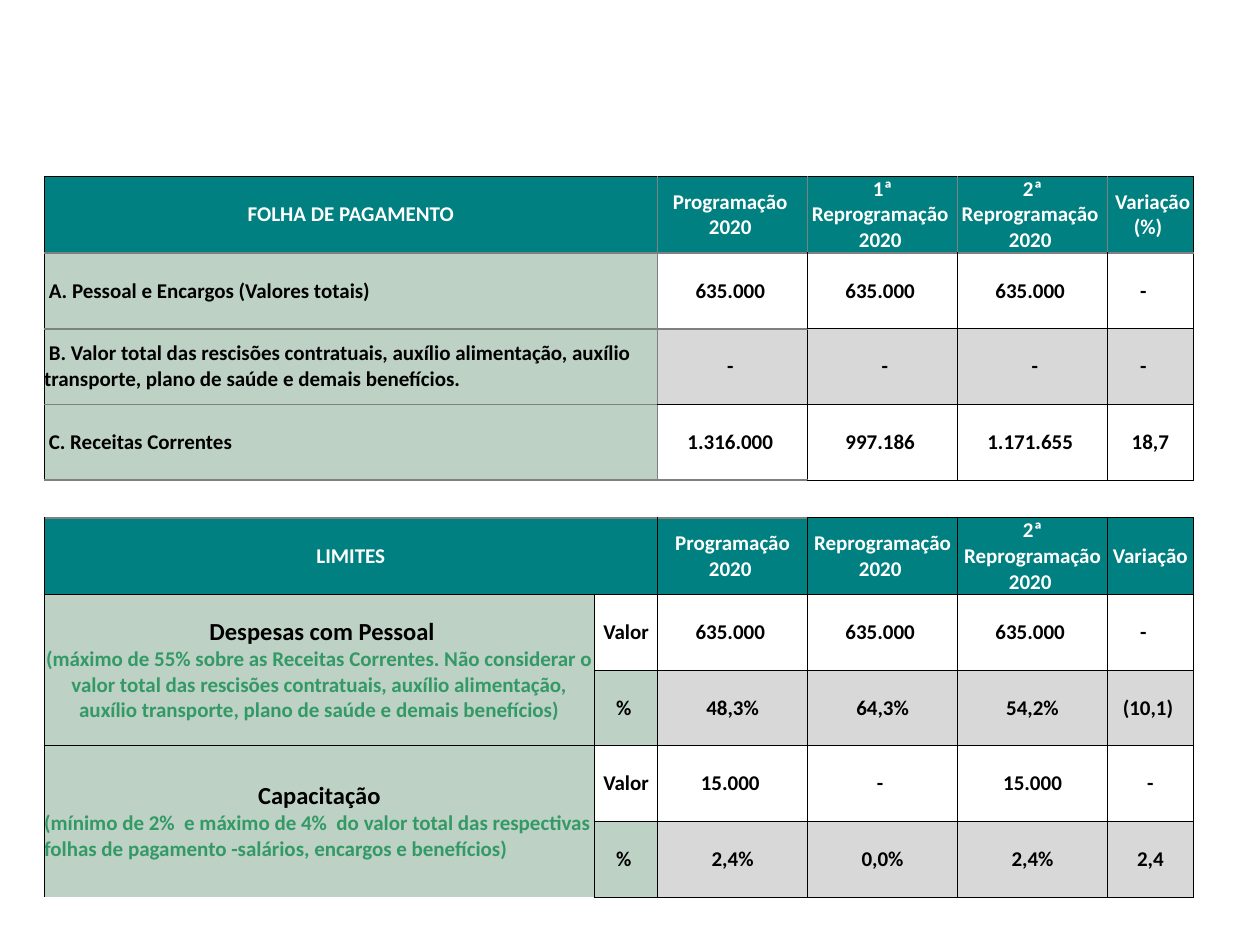
from dataclasses import dataclass
from typing import Optional

from lxml.etree import SubElement
from pptx import Presentation
from pptx.dml.color import RGBColor
from pptx.enum.text import MSO_ANCHOR, PP_ALIGN
from pptx.oxml.ns import qn
from pptx.util import Pt

TEAL, SAGE, SILVER, WHITE = "008080", "BDD1C5", "D8D8D8", "FFFFFF"
BLACK, GREY, GREEN = "000000", "808080", "339966"
PLAIN_STYLE = "{2D5ABB26-0587-4C30-8999-92F81FD0307C}"

COLUMN_WIDTHS = [314.6, 36, 85.7, 85.7, 85.7, 49]
ROW_HEIGHT = 43.2
SPACER_ROW = 4
ROW_COUNT = 10
# How many columns, from the left, have a grey line above the given row
GREY_ABOVE = {1: 6, 2: 3, 3: 2, 4: 3}


@dataclass
class Para:
    text: str
    size: float = 12
    color: str = BLACK
    align: PP_ALIGN = PP_ALIGN.CENTER


@dataclass
class Row:
    index: int
    labels: list[list[Para]]
    label_fills: list[Optional[str]]
    values: list[str]
    value_fill: Optional[str] = None
    value_color: str = BLACK


def rgb(color: str) -> RGBColor:
    return RGBColor.from_string(color)


def header(index: int, title: str, values: list[str]) -> Row:
    return Row(index, [[Para(title, color=WHITE)]], [TEAL], values, TEAL, WHITE)


def payroll(index: int, label: str, values: list[str], fill: Optional[str] = None) -> Row:
    return Row(index, [[Para(label, align=PP_ALIGN.LEFT)]], [SAGE], values, fill)


def limit(index: int, paras: list[Para], amounts: list[str], shares: list[str]) -> list[Row]:
    return [
        Row(index, [paras, [Para(" Valor ")]], [SAGE, None], amounts),
        Row(index + 1, [[], [Para("% ")]], [SAGE, SAGE], shares, SILVER),
    ]


ROWS = [
    header(0, " FOLHA DE PAGAMENTO ", ["Programação \n2020 ", "1ª Reprogramação \n2020 ",
                                       "2ª Reprogramação \n2020 ", " Variação\n(%) "]),
    payroll(1, " A. Pessoal e Encargos (Valores totais)",
            ["635.000 ", "635.000 ", "635.000 ", "- "]),
    payroll(2, " B. Valor total das rescisões contratuais, auxílio alimentação, auxílio "
               "transporte, plano de saúde e demais benefícios.",
            ["- ", " -", " -", "- "], SILVER),
    payroll(3, " C. Receitas Correntes", ["1.316.000 ", "997.186 ", "1.171.655 ", "18,7"]),
    header(5, " LIMITES ", ["Programação 2020 ", "Reprogramação 2020 ",
                            "2ª Reprogramação 2020 ", " Variação "]),
    *limit(6, [Para(" Despesas com Pessoal", 14),
               Para("(máximo de 55% sobre as Receitas Correntes. Não considerar o valor total "
                    "das rescisões contratuais, auxílio alimentação, auxílio transporte, plano "
                    "de saúde e demais benefícios)", color=GREEN)],
           ["635.000 ", "635.000 ", "635.000 ", "- "],
           ["48,3%", "64,3%", "54,2%", "(10,1) "]),
    *limit(8, [Para("Capacitação", 14),
               Para("(mínimo de 2%  e máximo de 4%  do valor total das respectivas folhas de "
                    "pagamento -salários, encargos e benefícios)", color=GREEN,
                    align=PP_ALIGN.LEFT)],
           ["15.000 ", "- ", "15.000", "-"],
           ["2,4%", "0,0%", "2,4%", "2,4"]),
]


def vertical_line(row: int, edge: int) -> Optional[str]:
    """Colour of the line left of column `edge`, if there is one."""
    if row == SPACER_ROW or (edge == 1 and row <= 5):
        return None
    inner_header = row == 0 and 2 < edge < 6
    return GREY if inner_header or (edge == 2 and row < SPACER_ROW) else BLACK


def horizontal_line(edge: int, column: int) -> Optional[str]:
    """Colour of the line above row `edge`, if there is one."""
    if edge == SPACER_ROW + 1 or (column == 0 and edge in (7, 9)):
        return None
    return GREY if column < GREY_ABOVE.get(edge, 0) else BLACK


def draw_borders(cell, row: int, column: int) -> None:
    sides = {
        "a:lnL": vertical_line(row, column),
        "a:lnR": vertical_line(row, column + 1),
        "a:lnT": horizontal_line(row, column),
        "a:lnB": horizontal_line(row + 1, column),
    }
    properties = cell._tc.get_or_add_tcPr()
    for tag, color in sides.items():
        if color:
            width = Pt(1) if color == GREY else Pt(0.5)
            line = SubElement(properties, qn(tag), w=str(width))
            fill = SubElement(line, qn("a:solidFill"))
            SubElement(fill, qn("a:srgbClr"), val=color)


def paint(cell, color: Optional[str]) -> None:
    if color:
        cell.fill.solid()
        cell.fill.fore_color.rgb = rgb(color)
    else:
        cell.fill.background()


def write(cell, paras: list[Para]) -> None:
    frame = cell.text_frame
    for number, item in enumerate(paras):
        para = frame.paragraphs[0] if number == 0 else frame.add_paragraph()
        para.alignment = item.align
        for line_number, line in enumerate(item.text.split("\n")):
            if line_number:
                para.add_line_break()
            span = para.add_run()
            span.text = line
            span.font.name = "Calibri"
            span.font.size = Pt(item.size)
            span.font.bold = True
            span.font.color.rgb = rgb(item.color)


def fill_row(table, row: Row) -> None:
    for column, (paras, fill) in enumerate(zip(row.labels, row.label_fills)):
        write(table.cell(row.index, column), paras)
        paint(table.cell(row.index, column), fill)
    for column, value in enumerate(row.values, start=2):
        cell = table.cell(row.index, column)
        write(cell, [Para(value, color=row.value_color)])
        paint(cell, row.value_fill)


def main() -> None:
    deck = Presentation()
    deck.slide_width, deck.slide_height = Pt(720), Pt(540)
    page = deck.slides.add_slide(deck.slide_layouts[6])

    # Table grid
    table = page.shapes.add_table(ROW_COUNT, len(COLUMN_WIDTHS), Pt(25.2), Pt(100.8),
                                  Pt(sum(COLUMN_WIDTHS)), Pt(9.5 * ROW_HEIGHT)).table
    table.first_row = table.horz_banding = False
    table._tbl.tblPr.find(qn("a:tableStyleId")).text = PLAIN_STYLE
    for column, width in enumerate(COLUMN_WIDTHS):
        table.columns[column].width = Pt(width)
    for index in range(ROW_COUNT):
        table.rows[index].height = Pt(ROW_HEIGHT / 2 if index == SPACER_ROW else ROW_HEIGHT)
        for column in range(len(COLUMN_WIDTHS)):
            cell = table.cell(index, column)
            cell.margin_left = cell.margin_right = cell.margin_top = cell.margin_bottom = 0
            cell.vertical_anchor = MSO_ANCHOR.MIDDLE
            draw_borders(cell, index, column)
            if index == SPACER_ROW:
                paint(cell, WHITE)
                cell.text_frame.paragraphs[0].font.size = Pt(12)

    # Merged labels
    for index in (0, 1, 2, 3, 5):
        table.cell(index, 0).merge(table.cell(index, 1))
    for index in (6, 8):
        table.cell(index, 0).merge(table.cell(index + 1, 0))

    # Contents
    for row in ROWS:
        fill_row(table, row)
    # Dashes of the variation column sit slightly left of centre
    for index in (1, 2, 6):
        table.cell(index, 5).margin_right = Pt(5.5)

    deck.save("out.pptx")


if __name__ == "__main__":
    main()
